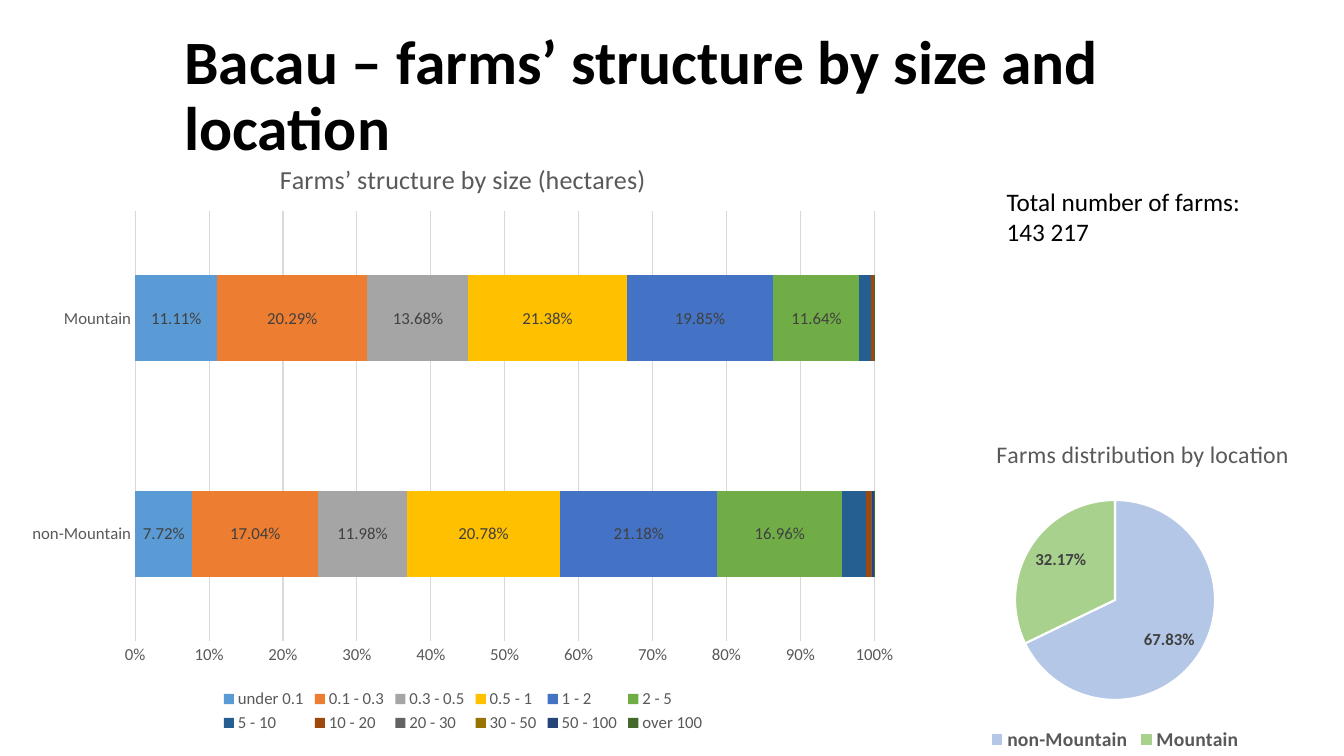
from lxml import etree
from pptx import Presentation
from pptx.chart.data import CategoryChartData
from pptx.dml.color import RGBColor
from pptx.enum.chart import XL_CHART_TYPE, XL_LABEL_POSITION, XL_LEGEND_POSITION, XL_TICK_MARK
from pptx.enum.text import MSO_ANCHOR
from pptx.oxml.ns import qn
from pptx.util import Pt

STACKED_BAR = XL_CHART_TYPE.BAR_STACKED_100
PIE = XL_CHART_TYPE.PIE
CENTER = XL_LABEL_POSITION.CENTER
INSIDE_END = XL_LABEL_POSITION.INSIDE_END
BOTTOM = XL_LEGEND_POSITION.BOTTOM
NO_TICK = XL_TICK_MARK.NONE
MIDDLE = MSO_ANCHOR.MIDDLE
TOP = MSO_ANCHOR.TOP

LOCATIONS = ["non-Mountain", "Mountain"]
FARM_SIZES = [
    ("under 0.1", "5B9BD5", (0.0772, 0.1111)),
    ("0.1 - 0.3", "ED7D31", (0.1704, 0.2029)),
    ("0.3 - 0.5", "A5A5A5", (0.1198, 0.1368)),
    ("0.5 - 1", "FFC000", (0.2078, 0.2138)),
    ("1 - 2", "4472C4", (0.2118, 0.1985)),
    ("2 - 5", "70AD47", (0.1696, 0.1164)),
    ("5 - 10", "255E91", (0.032, 0.015)),
    ("10 - 20", "9E480E", (0.007, 0.004)),
    ("20 - 30", "636363", (0.001, 0)),
    ("30 - 50", "997300", (0, 0)),
    ("50 - 100", "264478", (0.002, 0)),
    ("over 100", "43682B", (0.001, 0.001)),
]
LABELLED_SIZES = 6
FARM_SHARES = (67.83, 32.17)
LOCATION_COLORS = ("B4C7E7", "A9D18E")


def color(value):
    return RGBColor.from_string(value)


class FarmSlide:
    font_name = "Calibri"
    text_color = "000000"
    muted = "595959"
    label_color = "404040"
    grid = "D9D9D9"

    def __init__(self, slide):
        self.slide = slide

    def style(self, font, size, ink, bold=False):
        font.name = self.font_name
        font.size = Pt(size)
        font.bold = bold
        font.color.rgb = color(ink)

    def text(self, box, lines, size, bold=False, anchor=TOP, spacing=None):
        frame = self.slide.shapes.add_textbox(*map(Pt, box)).text_frame
        frame.word_wrap = True
        frame.vertical_anchor = anchor
        for index, line in enumerate(lines):
            paragraph = frame.add_paragraph() if index else frame.paragraphs[0]
            paragraph.line_spacing = spacing
            run = paragraph.add_run()
            run.text = line
            self.style(run.font, size, self.text_color, bold)

    def place(self, parent, index, **fractions):
        for old in parent.findall(qn("c:layout")):
            parent.remove(old)
        layout = etree.Element(qn("c:layout"))
        parent.insert(index, layout)
        manual = etree.SubElement(layout, qn("c:manualLayout"))
        if "w" in fractions:
            etree.SubElement(manual, qn("c:layoutTarget")).set("val", "inner")
        for side in "xy":
            etree.SubElement(manual, qn(f"c:{side}Mode")).set("val", "edge")
        for name, fraction in fractions.items():
            etree.SubElement(manual, qn(f"c:{name}")).set("val", str(fraction))

    def chart(self, kind, box, series, title, title_size, plot_area, legend_size,
              legend_bold=False):
        data = CategoryChartData()
        data.categories = LOCATIONS
        for name, values in series:
            data.add_series(name, values)
        chart = self.slide.shapes.add_chart(kind, *map(Pt, box), data).chart
        self.style(chart.font, 10, self.text_color)
        chart.has_title = True
        frame = chart.chart_title.text_frame
        frame.word_wrap = False
        run = frame.paragraphs[0].add_run()
        run.text = title
        self.style(run.font, title_size, self.muted)
        chart.has_legend = True
        chart.legend.position = BOTTOM
        chart.legend.include_in_layout = False
        self.style(chart.legend.font, legend_size, self.muted, legend_bold)
        x, y, w, h = plot_area
        self.place(chart.plots[0]._element.getparent(), 0, x=x, y=y, w=w, h=h)
        return chart

    def labels(self, labels, position, percent=False, bold=False):
        self.style(labels.font, 12, self.label_color, bold)
        labels.number_format = "0.00%"
        labels.number_format_is_linked = False
        labels.show_value = not percent
        labels.show_percentage = percent
        labels.position = position

    def axis(self, axis):
        axis.major_tick_mark = axis.minor_tick_mark = NO_TICK
        self.style(axis.tick_labels.font, 12, self.muted)

    def size_chart(self, box):
        series = [(name, shares) for name, _, shares in FARM_SIZES]
        chart = self.chart(STACKED_BAR, box, series, "Farms’ structure by size (hectares)",
                           18.6, (0.134, 0.12, 0.825, 0.72), 12)
        plot = chart.plots[0]
        plot.gap_width = 150
        plot.overlap = 100
        for index, (size, (_, fill, _)) in enumerate(zip(plot.series, FARM_SIZES)):
            size.format.fill.solid()
            size.format.fill.fore_color.rgb = color(fill)
            if index < LABELLED_SIZES:
                self.labels(size.data_labels, CENTER)
        locations, shares = chart.category_axis, chart.value_axis
        self.axis(locations)
        self.axis(shares)
        shares.has_major_gridlines = True
        for line in (locations.format.line, shares.major_gridlines.format.line):
            line.color.rgb = color(self.grid)
            line.width = Pt(0.75)
        shares.format.line.fill.background()
        shares.tick_labels.number_format = "0%"
        shares.tick_labels.number_format_is_linked = False

    def location_chart(self, box):
        chart = self.chart(PIE, box, [("Series 1", FARM_SHARES)],
                           "Farms distribution by location", 17,
                           (0.256, 0.214, 0.489, 0.614), 14, True)
        self.place(chart.chart_title._element, 1, x=0.2, y=0.01)
        plot = chart.plots[0]
        plot.vary_by_categories = True
        farms = plot.series[0]
        for index, fill in enumerate(LOCATION_COLORS):
            wedge = farms.points[index].format
            wedge.fill.solid()
            wedge.fill.fore_color.rgb = color(fill)
            wedge.line.color.rgb = color("FFFFFF")
            wedge.line.width = Pt(1.5)
        self.labels(farms.data_labels, INSIDE_END, percent=True, bold=True)


def main():
    deck = Presentation()
    deck.slide_width, deck.slide_height = Pt(960), Pt(540)
    farms = FarmSlide(deck.slides.add_slide(deck.slide_layouts[6]))
    farms.text((124.6, 19.4, 818, 100.8), ["Bacau – farms’ structure by size and location"],
               44, bold=True, anchor=MIDDLE, spacing=0.9)
    farms.location_chart((650.2, 307.4, 292.3, 232.6))
    farms.size_chart((10.8, 99.4, 640, 427))
    farms.text((712, 129.6, 210, 51), ["Total number of farms:", "143 217"], 18)
    deck.save("out.pptx")


if __name__ == "__main__":
    main()
